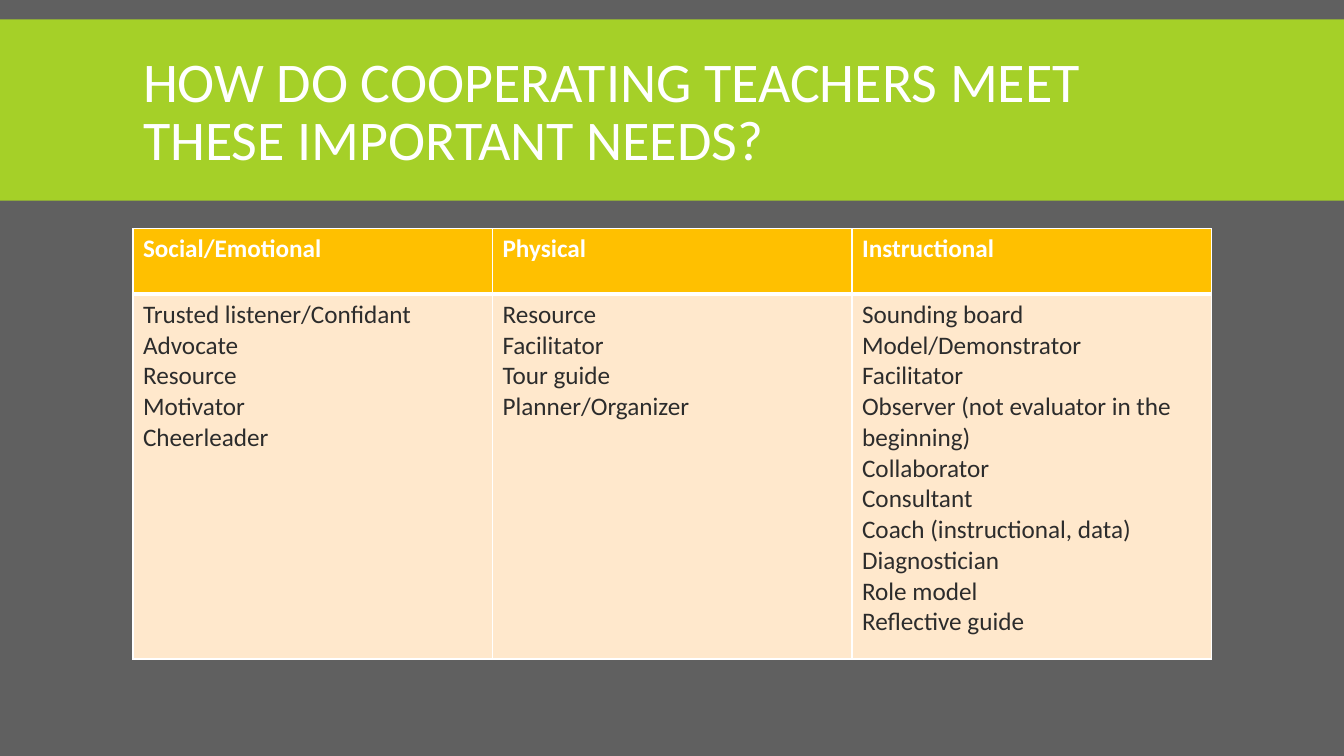
import pptx
import pptx.dml.color
import pptx.enum.shapes
import pptx.enum.text
import pptx.oxml.ns
import pptx.util
from lxml import etree

Pt = pptx.util.Pt
FONT = "Calibri"
COLORS = {
    "background": "606060",
    "band": "A5D028",
    "header": "FFC000",
    "body": "FFE8CC",
    "white": "FFFFFF",
    "text": "2C2C2C",
}
NEEDS = {
    "Social/Emotional": [
        "Trusted listener/Confidant", "Advocate", "Resource", "Motivator", "Cheerleader",
    ],
    "Physical": ["Resource", "Facilitator", "Tour guide", "Planner/Organizer"],
    "Instructional": [
        "Sounding board", "Model/Demonstrator", "Facilitator",
        "Observer (not evaluator in the beginning)", "Collaborator", "Consultant",
        "Coach (instructional, data)", "Diagnostician", "Role model", "Reflective guide",
    ],
}


class SlideBuilder:
    def __init__(self, slide):
        self.slide = slide
        self.paint(slide.background.fill, "background")

    def paint(self, fill, color):
        fill.solid()
        fill.fore_color.rgb = pptx.dml.color.RGBColor.from_string(COLORS[color])

    def format_text(self, frame, size, color, bold=False):
        for paragraph in frame.paragraphs:
            for run in paragraph.runs:
                run.font.name = FONT
                run.font.size = Pt(size)
                run.font.bold = bold
                self.paint(run.font.fill, color)

    def band(self, left, top, width, height):
        """Add a full-colour strip behind everything else on the slide."""
        strip = self.slide.shapes.add_shape(
            pptx.enum.shapes.MSO_SHAPE.RECTANGLE, Pt(left), Pt(top), Pt(width), Pt(height))
        strip.shadow.inherit = False
        self.paint(strip.fill, "band")
        strip.line.fill.background()
        self.slide.shapes.element.insert(2, strip.element)

    def title(self, wording, left, top, width, height):
        heading = self.slide.shapes.title
        heading.left, heading.top = Pt(left), Pt(top)
        heading.width, heading.height = Pt(width), Pt(height)
        frame = heading.text_frame
        frame.text = wording
        frame.word_wrap = True
        frame.auto_size = pptx.enum.text.MSO_AUTO_SIZE.NONE
        frame.vertical_anchor = pptx.enum.text.MSO_ANCHOR.MIDDLE
        frame.paragraphs[0].alignment = pptx.enum.text.PP_ALIGN.LEFT
        frame.paragraphs[0].line_spacing = 0.85
        self.format_text(frame, 40, "white")

    def borders(self, cell, **widths):
        """Draw white cell borders; widths are given per side (L, R, T, B) in points."""
        properties = cell._tc.get_or_add_tcPr()
        qn = pptx.oxml.ns.qn
        for side in "LRTB":
            line = etree.SubElement(
                properties, qn(f"a:ln{side}"), w=str(Pt(widths.get(side, 1))))
            solid = etree.SubElement(line, qn("a:solidFill"))
            etree.SubElement(solid, qn("a:srgbClr"), val=COLORS["white"])

    def cell(self, cell, wording, fill, color, bold=False, **widths):
        self.borders(cell, **widths)
        self.paint(cell.fill, fill)
        cell.text_frame.text = wording
        self.format_text(cell.text_frame, 18, color, bold)

    def table(self, columns, left, top, width, row_heights):
        """Add a two-row table: headings above, one list per column below."""
        grid = self.slide.shapes.add_table(
            2, len(columns), Pt(left), Pt(top), Pt(width), Pt(sum(row_heights))).table
        for row, height in zip(grid.rows, row_heights):
            row.height = Pt(height)
        for index, (need, roles) in enumerate(columns.items()):
            grid.columns[index].width = Pt(width / len(columns))
            self.cell(grid.cell(0, index), need, "header", "white", bold=True, B=3)
            self.cell(grid.cell(1, index), "\n".join(roles), "body", "text", T=3)


def main():
    deck = pptx.Presentation()
    deck.slide_width, deck.slide_height = Pt(960), Pt(540)
    builder = SlideBuilder(deck.slides.add_slide(deck.slide_layouts[5]))
    builder.band(0, 13.8, 960, 129.6)
    builder.title("HOW DO COOPERATING TEACHERS MEET THESE IMPORTANT NEEDS?",
                  95, 22.3, 770.4, 118.8)
    builder.table(NEEDS, 95, 163.4, 770.4, [46.8, 260.6])
    deck.save("out.pptx")


if __name__ == "__main__":
    main()
